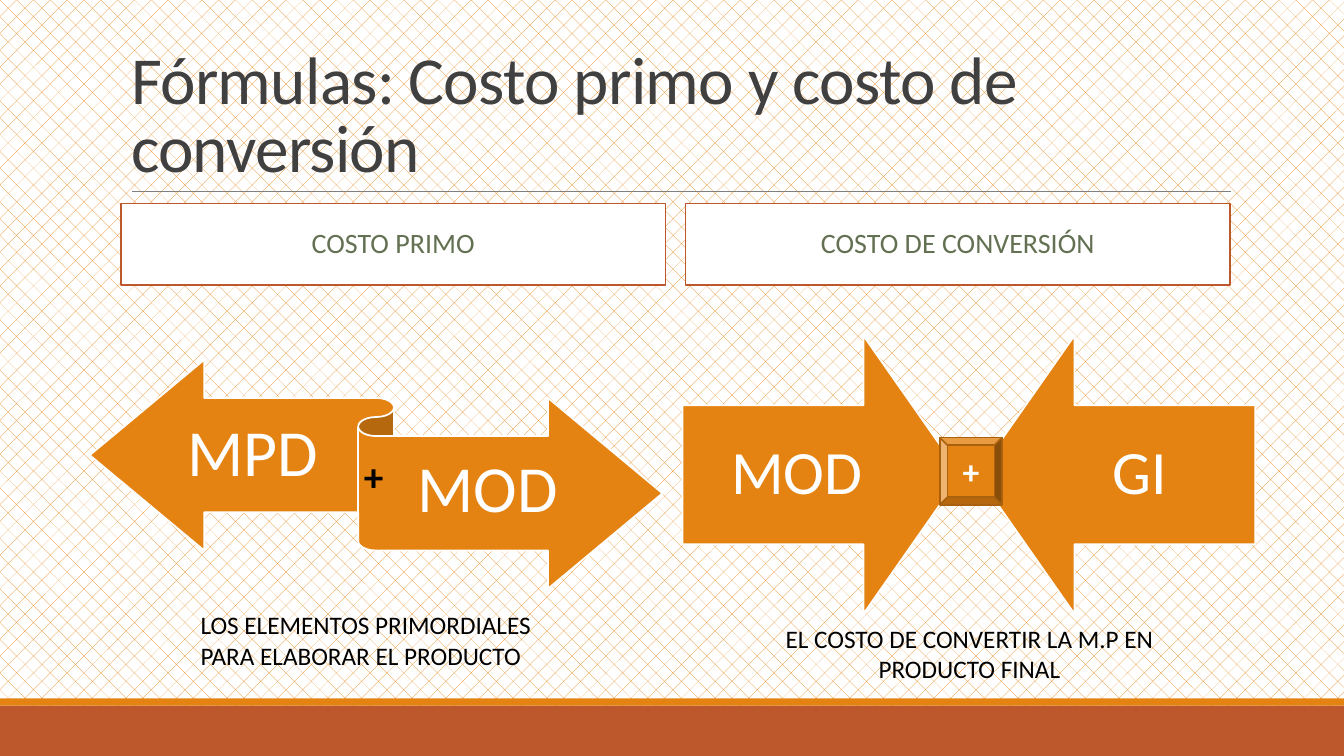
import pptx
import pptx.util
import pptx.dml.color
import pptx.enum.dml
import pptx.enum.shapes
import pptx.enum.text
import pptx.oxml.ns
import lxml.etree

Inches = pptx.util.Inches
Pt = pptx.util.Pt
Shape = pptx.enum.shapes.MSO_SHAPE
Align = pptx.enum.text.PP_ALIGN
Anchor = pptx.enum.text.MSO_ANCHOR

FONT = "Calibri"
ORANGE, RUST, WHITE, BLACK = "E48312", "BD582C", "FFFFFF", "000000"

TITLE = "Fórmulas: Costo primo y costo de conversión"
HEADINGS = ["COSTO PRIMO", "COSTO DE CONVERSIÓN"]
HEADING_LEFT, HEADING_STEP = 1.2, 5.6
# left, top, width, height, fill
BANDS = [(0, 7, 13.33, 0.5, RUST), (0, 6.93, 13.33, 0.07, ORANGE)]
# left, rotation
ARROWS = [(6.77, 270), (9.69, 90)]
ARROW_TOP, ARROW_SIDE = 3.33, 2.76
# text, place, size, vertical insets
LABELS = [
    ("MPD", (1.57, 3.97, 1.87, 1.11), 47, (0.18, 0.2)),
    ("MOD", (3.73, 4.33, 2.21, 1.11), 47, (0.18, 0.2)),
    ("MOD", (6.77, 4.02, 2.27, 1.38), 44, (0.34, 0.34)),
    ("GI", (10.17, 4.02, 2.27, 1.38), 44, (0.34, 0.34)),
]
# text, place, size, bold, alignment
NOTES = [
    ("+", (3.51, 4.44, 0.41, 0.57), 28, True, Align.LEFT),
    ("EL COSTO DE CONVERTIR LA M.P EN PRODUCTO FINAL",
     (7.41, 6.13, 4.41, 0.71), 18, False, Align.CENTER),
    ("LOS ELEMENTOS PRIMORDIALES PARA ELABORAR EL PRODUCTO",
     (1.89, 6, 3.58, 0.71), 18, False, Align.LEFT),
]


def color(value):
    return pptx.dml.color.RGBColor.from_string(value)


def place(box, left, top, width, height):
    box.left, box.top = Inches(left), Inches(top)
    box.width, box.height = Inches(width), Inches(height)


def paint(box, fill, line=None):
    box.fill.solid()
    box.fill.fore_color.rgb = color(fill)
    if line:
        box.line.color.rgb = color(line)
        box.line.width = Pt(1.25)
    else:
        box.line.fill.background()


def write(box, text, size, ink, align=Align.CENTER, anchor=Anchor.MIDDLE,
          bold=False, spacing=None):
    frame = box.text_frame
    frame.word_wrap = True
    frame.auto_size = pptx.enum.text.MSO_AUTO_SIZE.NONE
    frame.vertical_anchor = anchor
    para = frame.paragraphs[0]
    para.alignment = align
    para.line_spacing = spacing
    span = para.add_run()
    span.text = text
    span.font.name, span.font.size, span.font.bold = FONT, Pt(size), bold
    span.font.color.rgb = color(ink)
    return para


def add_shape(page, kind, spot, fill, line=None):
    shape = page.shapes.add_shape(kind, *map(Inches, spot))
    shape.shadow.inherit = False
    paint(shape, fill, line)
    return shape


def add_text(page, spot):
    return page.shapes.add_textbox(*map(Inches, spot))


def add_frame(page):
    """Background, bottom bands and the rule under the title."""
    fill = page.background.fill
    fill.patterned()
    fill.pattern = pptx.enum.dml.MSO_PATTERN.DOTTED_DIAMOND
    fill.fore_color.rgb = color(ORANGE)
    fill.back_color.rgb = color(WHITE)
    for *spot, shade in BANDS:
        add_shape(page, Shape.RECTANGLE, spot, shade)
    rule = page.shapes.add_connector(
        pptx.enum.shapes.MSO_CONNECTOR.STRAIGHT,
        Inches(1.31), Inches(1.9), Inches(12.21), Inches(1.9))
    rule.line.color.rgb = color("808080")
    rule.line.width = Pt(0.5)
    lxml.etree.SubElement(rule._element.spPr, pptx.oxml.ns.qn("a:effectLst"))


def add_headings(page):
    title, first, first_body, second, second_body = page.placeholders
    for spare in (first_body, second_body):
        spare._element.getparent().remove(spare._element)
    place(title, 1.2, 0.31, 11, 1.59)
    para = write(title, TITLE, 48, "404040", Align.LEFT, Anchor.BOTTOM, spacing=0.85)
    para.runs[0].font._element.set("spc", "-50")
    for index, (box, text) in enumerate(zip((first, second), HEADINGS)):
        place(box, HEADING_LEFT + index * HEADING_STEP, 2.02, 5.4, 0.81)
        paint(box, WHITE, RUST)
        para = write(box, text, 20, "637052", spacing=0.9)
        para.space_before, para.space_after = Pt(12), Pt(2)


def add_diagrams(page):
    add_shape(page, Shape.LEFT_RIGHT_RIBBON, (0.89, 3.57, 5.68, 2.27), ORANGE, WHITE)
    for left, turn in ARROWS:
        arrow = add_shape(page, Shape.DOWN_ARROW,
                          (left, ARROW_TOP, ARROW_SIDE, ARROW_SIDE), ORANGE, WHITE)
        arrow.rotation = turn
        arrow.adjustments[0], arrow.adjustments[1] = 0.5, 0.35
    for text, spot, size, (above, below) in LABELS:
        box = add_text(page, spot)
        write(box, text, size, WHITE, spacing=0.9)
        frame = box.text_frame
        frame.margin_left = frame.margin_right = 0
        frame.margin_top, frame.margin_bottom = Inches(above), Inches(below)
    plus = add_shape(page, Shape.BEVEL, (9.32, 4.34, 0.62, 0.67), ORANGE, "A9610D")
    write(plus, "+", 24, WHITE, bold=True)
    for text, spot, size, bold, align in NOTES:
        write(add_text(page, spot), text, size, BLACK, align, Anchor.TOP, bold)


def main():
    deck = pptx.Presentation()
    deck.slide_width, deck.slide_height = Inches(13.33), Inches(7.5)
    page = deck.slides.add_slide(deck.slide_layouts.get_by_name("Comparison"))
    add_frame(page)
    add_headings(page)
    add_diagrams(page)
    deck.save("out.pptx")


if __name__ == "__main__":
    main()
